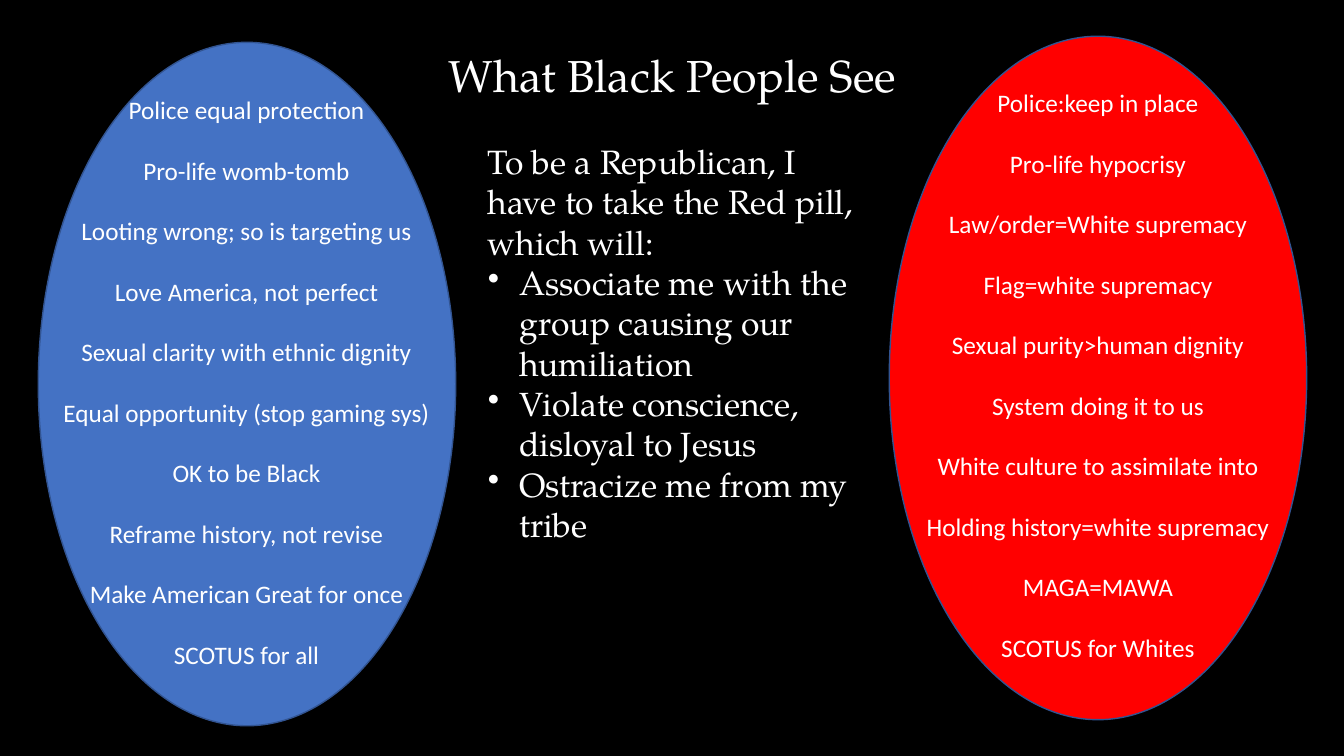
from lxml import etree
from pptx import Presentation
from pptx.dml.color import RGBColor
from pptx.enum.shapes import MSO_SHAPE
from pptx.enum.text import MSO_AUTO_SIZE, PP_ALIGN
from pptx.oxml.ns import qn
from pptx.util import Inches, Pt

OVAL = MSO_SHAPE.OVAL
CENTER, LEFT = PP_ALIGN.CENTER, PP_ALIGN.LEFT
FIT_SHAPE = MSO_AUTO_SIZE.SHAPE_TO_FIT_TEXT

BLACK = RGBColor(0x00, 0x00, 0x00)
WHITE = RGBColor(0xFF, 0xFF, 0xFF)
BLUE = RGBColor(0x44, 0x72, 0xC4)
RED = RGBColor(0xFF, 0x00, 0x00)
OUTLINE = RGBColor(0x32, 0x54, 0x91)

SERIF, SANS = "TeX Gyre Pagella", "Calibri"
PILL_WIDTH, PILL_HEIGHT = 4.14, 6.78
BULLET_INDENT = Inches(0.31)

BLUE_PILL = [
    "Police equal protection",
    "Pro-life womb-tomb",
    "Looting wrong; so is targeting us",
    "Love America, not perfect",
    "Sexual clarity with ethnic dignity",
    "Equal opportunity (stop gaming sys)",
    "OK to be Black",
    "Reframe history, not revise",
    "Make American Great for once",
    "SCOTUS for all",
]
RED_PILL = [
    "Police:keep in place",
    "Pro-life hypocrisy",
    "Law/order=White supremacy",
    "Flag=white supremacy",
    "Sexual purity>human dignity",
    "System doing it to us",
    "White culture to assimilate into",
    "Holding history=white supremacy",
    "MAGA=MAWA",
    "SCOTUS for Whites",
]
INTRO = "To be a Republican, I have to take the Red pill, which will:"
CONSEQUENCES = [
    "Associate me with the group causing our humiliation",
    "Violate conscience, disloyal to Jesus",
    "Ostracize me from my tribe",
]


def add_pill(slide, left, top, color):
    pill = slide.shapes.add_shape(
        OVAL, Inches(left), Inches(top), Inches(PILL_WIDTH), Inches(PILL_HEIGHT))
    pill.shadow.inherit = False
    pill.fill.solid()
    pill.fill.fore_color.rgb = color
    pill.line.color.rgb = OUTLINE
    pill.line.width = Pt(1)


def add_text(slide, box, lines, font, size, align=LEFT, wrap=False, gap=0):
    """Add a text box with one paragraph per line; return its paragraphs."""
    frame = slide.shapes.add_textbox(*map(Inches, box)).text_frame
    frame.word_wrap = wrap
    frame.auto_size = FIT_SHAPE
    for index, line in enumerate(lines):
        paragraph = frame.add_paragraph() if index else frame.paragraphs[0]
        paragraph.alignment = align
        paragraph.space_before = Pt(gap if index else 0)
        run = paragraph.add_run()
        run.text = line
        run.font.name = font
        run.font.size = Pt(size)
        run.font.color.rgb = WHITE
    return frame.paragraphs


def add_bullet(paragraph):
    properties = paragraph._p.get_or_add_pPr()
    properties.set("marL", str(BULLET_INDENT))
    properties.set("indent", str(-BULLET_INDENT))
    etree.SubElement(properties, qn("a:buChar")).set("char", "•")


def main():
    presentation = Presentation()
    presentation.slide_width = Inches(13.33)
    presentation.slide_height = Inches(7.5)
    slide = presentation.slides.add_slide(presentation.slide_layouts[6])
    slide.background.fill.solid()
    slide.background.fill.fore_color.rgb = BLACK

    # Title
    add_text(slide, (4.23, 0.42, 4.88, 0.64), ["What Black People See"],
             SERIF, 32, CENTER)

    # Blue and red pills
    add_pill(slide, 0.38, 0.42, BLUE)
    add_pill(slide, 8.82, 0.36, RED)
    add_text(slide, (0.51, 0.89, 3.87, 5.86), BLUE_PILL, SANS, 18, CENTER, gap=21.6)
    add_text(slide, (9.04, 0.82, 3.7, 5.86), RED_PILL, SANS, 18, CENTER, gap=21.6)

    # Consequences between the pills
    paragraphs = add_text(slide, (4.74, 1.35, 3.86, 4.14), [INTRO] + CONSEQUENCES,
                          SERIF, 24, wrap=True)
    for paragraph in paragraphs[1:]:
        add_bullet(paragraph)

    presentation.save("out.pptx")


if __name__ == "__main__":
    main()
